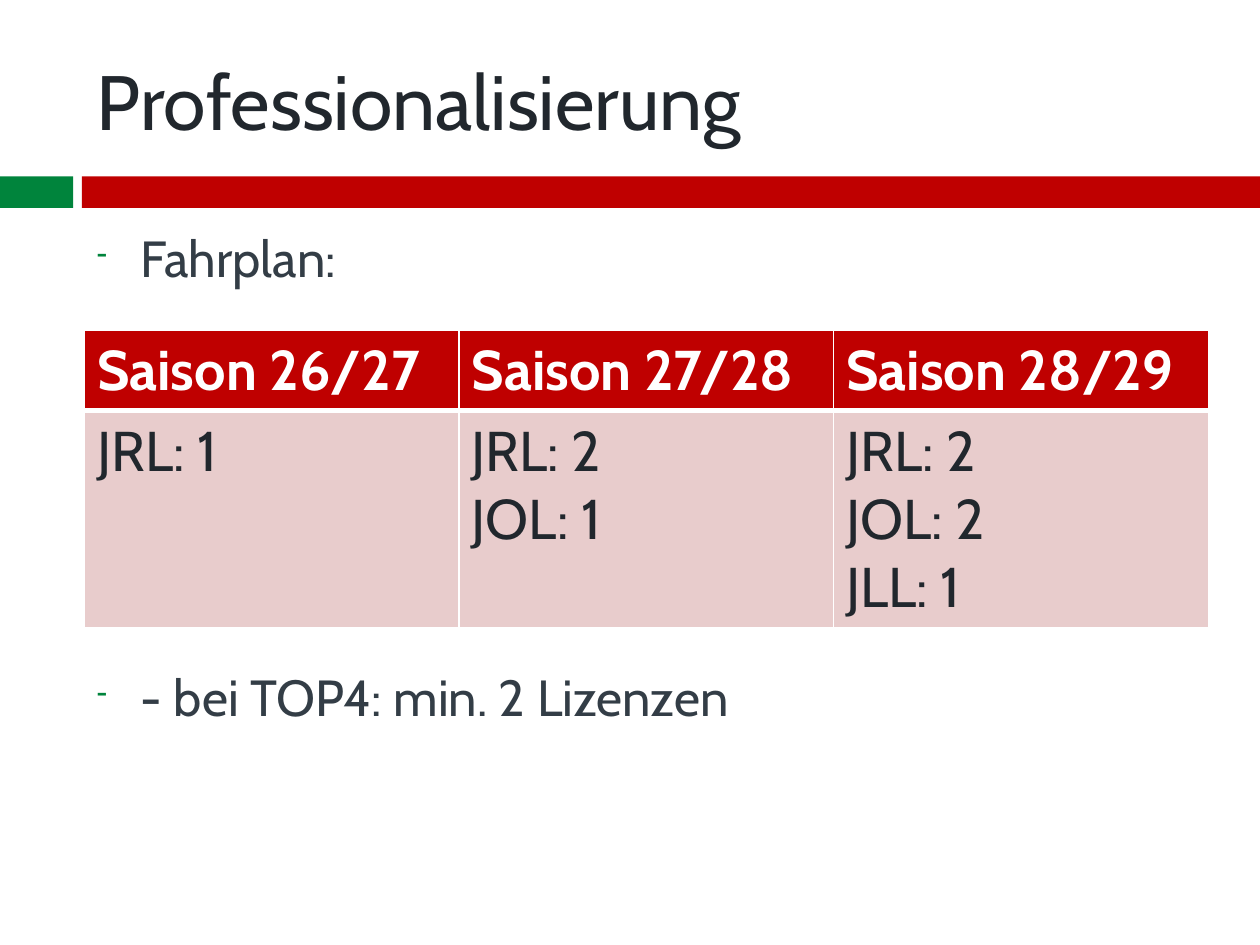
from dataclasses import dataclass

from lxml.etree import SubElement
from pptx import Presentation
from pptx.dml.color import RGBColor
from pptx.enum.shapes import MSO_SHAPE as Shape
from pptx.enum.text import MSO_ANCHOR as Anchor
from pptx.oxml.ns import qn
from pptx.util import Inches, Pt


@dataclass(frozen=True)
class Theme:
    font: str = "Cabin"
    red: str = "BF0000"
    green: str = "00843C"
    pink: str = "E8CCCC"
    white: str = "FFFFFF"
    dark: str = "21272D"
    slate: str = "333D46"
    title_size: int = 44
    body_size: int = 29
    table_size: int = 32


@dataclass(frozen=True)
class Box:
    left: float
    top: float
    width: float
    height: float

    def lengths(self) -> list:
        return [Inches(v) for v in (self.left, self.top, self.width, self.height)]


@dataclass(frozen=True)
class Season:
    name: str
    licences: tuple[str, ...]


@dataclass(frozen=True)
class Bullet:
    text: str
    space_before: int


THEME = Theme()
LEFT, WIDTH = 0.67, 8.92
HEADER_HEIGHT, BODY_HEIGHT = 0.64, 1.72
BARS = (
    (Box(0, 1.4, 0.58, 0.25), THEME.green),
    (Box(0.65, 1.4, 9.35, 0.25), THEME.red),
)
BULLETS = (
    Bullet("Fahrplan:", 7),
    Bullet("- bei TOP4: min. 2 Lizenzen", 216),
)
SEASONS = (
    Season("Saison 26/27", ("JRL: 1",)),
    Season("Saison 27/28", ("JRL: 2", "JOL: 1")),
    Season("Saison 28/29", ("JRL: 2", "JOL: 2", "JLL: 1")),
)


def add_run(p, text: str, size: int, color: str, bold: bool = False) -> None:
    r = p.add_run()
    r.text = text
    r.font.name = THEME.font
    r.font.size = Pt(size)
    r.font.bold = bold
    r.font.color.rgb = RGBColor.from_string(color)


def add_bar(s, box: Box, color: str) -> None:
    sp = s.shapes.add_shape(Shape.RECTANGLE, *box.lengths())
    sp.shadow.inherit = False
    sp.fill.solid()
    sp.fill.fore_color.rgb = RGBColor.from_string(color)
    sp.line.fill.background()


def add_text_frame(s, box: Box, anchor: Anchor):
    tf = s.shapes.add_textbox(*box.lengths()).text_frame
    tf.word_wrap = True
    tf.vertical_anchor = anchor
    return tf


def set_bullet(p, char: str, color: str, percent: int) -> None:
    pPr = p._p.get_or_add_pPr()
    pPr.set("marL", str(Inches(0.35)))
    pPr.set("indent", str(-Inches(0.35)))
    SubElement(SubElement(pPr, qn("a:buClr")), qn("a:srgbClr")).set("val", color)
    SubElement(pPr, qn("a:buSzPct")).set("val", str(percent * 1000))
    SubElement(pPr, qn("a:buChar")).set("char", char)


def add_bullets(s, box: Box, bullets: tuple[Bullet, ...]) -> None:
    tf = add_text_frame(s, box, Anchor.TOP)
    for i, bullet in enumerate(bullets):
        p = tf.add_paragraph() if i else tf.paragraphs[0]
        p.space_before = Pt(bullet.space_before)
        set_bullet(p, "-", THEME.green, 60)
        add_run(p, bullet.text, THEME.body_size, THEME.slate)


def set_borders(cell, top: int, bottom: int) -> None:
    tcPr = cell._tc.get_or_add_tcPr()
    widths = {"a:lnL": 1, "a:lnR": 1, "a:lnT": top, "a:lnB": bottom}
    for i, (tag, width) in enumerate(widths.items()):
        ln = tcPr.makeelement(qn(tag), {"w": str(Pt(width))})
        fill = SubElement(ln, qn("a:solidFill"))
        SubElement(fill, qn("a:srgbClr")).set("val", THEME.white)
        tcPr.insert(i, ln)


def fill_cell(cell, lines: tuple[str, ...], header: bool) -> None:
    cell.fill.solid()
    cell.fill.fore_color.rgb = RGBColor.from_string(THEME.red if header else THEME.pink)
    set_borders(cell, *((1, 3) if header else (3, 1)))
    tf = cell.text_frame
    for i, line in enumerate(lines):
        p = tf.add_paragraph() if i else tf.paragraphs[0]
        add_run(p, line, THEME.table_size, THEME.white if header else THEME.dark, header)


def add_season_table(s, box: Box, seasons: tuple[Season, ...]) -> None:
    table = s.shapes.add_table(2, len(seasons), *box.lengths()).table
    table.rows[0].height = Inches(HEADER_HEIGHT)
    table.rows[1].height = Inches(BODY_HEIGHT)
    for i, season in enumerate(seasons):
        table.columns[i].width = Inches(box.width / len(seasons))
        fill_cell(table.cell(0, i), (season.name,), True)
        fill_cell(table.cell(1, i), season.licences, False)


def main() -> None:
    prs = Presentation()
    prs.slide_width, prs.slide_height = Inches(10), Inches(7.5)
    s = prs.slides.add_slide(prs.slide_layouts[6])
    for box, color in BARS:
        add_bar(s, box, color)
    title = add_text_frame(s, Box(LEFT, 0.25, WIDTH, 1.08), Anchor.MIDDLE)
    add_run(title.paragraphs[0], "Professionalisierung", THEME.title_size, THEME.dark)
    add_bullets(s, Box(LEFT, 1.75, WIDTH, 4.92), BULLETS)
    add_season_table(s, Box(LEFT, 2.62, WIDTH, HEADER_HEIGHT + BODY_HEIGHT), SEASONS)
    prs.save("out.pptx")


if __name__ == "__main__":
    main()
